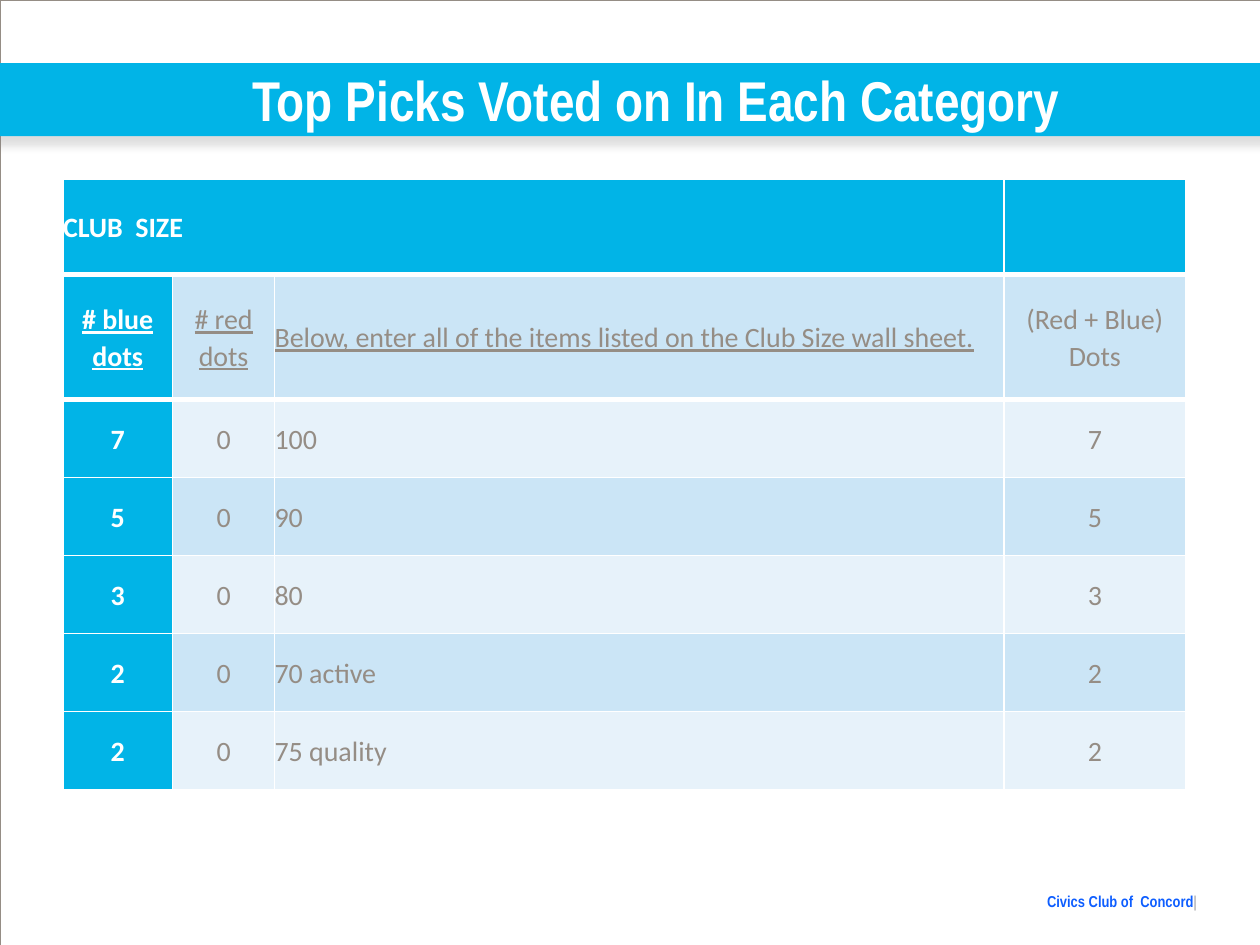
from dataclasses import dataclass

from lxml import etree
from pptx import Presentation
from pptx import util as u
from pptx.dml.color import RGBColor
from pptx.enum import shapes, text
from pptx.oxml import ns

COLORS = {
    "white": "FFFFFF", "cyan": "01B4E7", "taupe": "958D85", "blue": "0E5EFF",
    "silver": "BCBDC0", "band_dark": "CBE5F6", "band_light": "E7F2FA",
    "shadow": "808080",
}
LEFT, CENTER, RIGHT = text.PP_ALIGN.LEFT, text.PP_ALIGN.CENTER, text.PP_ALIGN.RIGHT


@dataclass
class Tally:
    blue: str
    red: str
    item: str
    total: str


HEADINGS = Tally("# blue dots", "# red dots",
                 "Below, enter all of the items listed on the Club Size wall sheet.",
                 "(Red + Blue) Dots")
TALLIES = [
    Tally("7", "0", "100", "7"),
    Tally("5", "0", "90", "5"),
    Tally("3", "0", "80", "3"),
    Tally("2", "0", "70 active", "2"),
    Tally("2", "0", "75 quality", "2"),
]
COLUMN_WIDTHS = [0.87, 0.81, 5.79, 1.44]
ROW_HEIGHTS = [0.76, 0.99] + [0.62] * len(TALLIES)
ITEM_COLUMN, TOTAL_COLUMN = 2, 3


def rgb(color: str) -> RGBColor:
    return RGBColor.from_string(COLORS[color])


def write(paragraph, words: str, *, size: float, font: str, color: str,
          bold: bool = False, underline: bool = False, align=LEFT, spacing: float = 1.0) -> None:
    paragraph.alignment = align
    paragraph.line_spacing = spacing
    run = paragraph.add_run()
    run.text = words
    run.font.size = u.Pt(size)
    run.font.name = font
    run.font.bold = bold
    run.font.underline = underline
    run.font.color.rgb = rgb(color)


def add_box(slide, left: float, top: float, width: float, height: float):
    """Add a wrapped text box without margins and return its first paragraph."""
    frame = slide.shapes.add_textbox(u.Inches(left), u.Inches(top),
                                     u.Inches(width), u.Inches(height)).text_frame
    frame.word_wrap = True
    frame.vertical_anchor = text.MSO_ANCHOR.MIDDLE
    frame.margin_left = frame.margin_right = frame.margin_top = frame.margin_bottom = 0
    return frame.paragraphs[0]


def add_rectangle(slide, left: float, top: float, width: float, height: float):
    rectangle = slide.shapes.add_shape(shapes.MSO_SHAPE.RECTANGLE, u.Inches(left), u.Inches(top),
                                       u.Inches(width), u.Inches(height))
    rectangle.shadow.inherit = False
    return rectangle


def add_color(parent, color: str):
    return etree.SubElement(parent, ns.qn("a:srgbClr"), val=COLORS[color])


def add_shadow(shape) -> None:
    effects = shape._element.spPr.find(ns.qn("a:effectLst"))
    shadow = etree.SubElement(effects, ns.qn("a:outerShdw"), blurRad=str(u.Pt(5)),
                              dist=str(u.Pt(4.8)), dir="5400000", rotWithShape="0")
    etree.SubElement(add_color(shadow, "shadow"), ns.qn("a:alpha"), val="25000")


def format_cell(cell, fill: str, top: float, bottom: float) -> None:
    cell.margin_left = cell.margin_right = cell.margin_top = cell.margin_bottom = 0
    cell.vertical_anchor = text.MSO_ANCHOR.MIDDLE
    properties = cell._tc.get_or_add_tcPr()
    for side, width in (("L", 1), ("R", 1), ("T", top), ("B", bottom)):
        line = etree.SubElement(properties, ns.qn(f"a:ln{side}"), w=str(u.Pt(width)))
        add_color(etree.SubElement(line, ns.qn("a:solidFill")), "white")
    cell.fill.solid()
    cell.fill.fore_color.rgb = rgb(fill)


def add_votes(slide) -> None:
    votes = slide.shapes.add_table(
        len(ROW_HEIGHTS), len(COLUMN_WIDTHS), u.Inches(0.5), u.Inches(1.42),
        u.Inches(sum(COLUMN_WIDTHS)), u.Inches(sum(ROW_HEIGHTS))).table
    votes.first_row = votes.horz_banding = False
    for column, width in zip(votes.columns, COLUMN_WIDTHS):
        column.width = u.Inches(width)
    for row, height in zip(votes.rows, ROW_HEIGHTS):
        row.height = u.Inches(height)
    body = dict(size=16, font="Calibri", spacing=1.07)

    # Category row
    for c in range(len(COLUMN_WIDTHS)):
        format_cell(votes.cell(0, c), "cyan", top=1, bottom=3)
    category = votes.cell(0, 0)
    category.merge(votes.cell(0, ITEM_COLUMN))
    write(category.text_frame.paragraphs[0], "CLUB  SIZE", color="white", bold=True, **body)

    # Headings and banded tallies
    for r, tally in enumerate([HEADINGS, *TALLIES], start=1):
        heading = r == 1
        band = "band_dark" if r % 2 else "band_light"
        for c, words in enumerate((tally.blue, tally.red, tally.item, tally.total)):
            first = c == 0
            cell = votes.cell(r, c)
            format_cell(cell, "cyan" if first else band,
                        top=3 if r <= 2 else 1, bottom=3 if heading else 1)
            write(cell.text_frame.paragraphs[0], words,
                  color="white" if first else "taupe", bold=first,
                  underline=heading and c != TOTAL_COLUMN,
                  align=LEFT if c == ITEM_COLUMN else CENTER, **body)


def main() -> None:
    deck = Presentation()
    deck.slide_width, deck.slide_height = u.Inches(10), u.Inches(7.5)
    slide = deck.slides.add_slide(deck.slide_layouts[6])

    # Footer
    footer = add_box(slide, 7.75, 7.08, 1.75, 0.14)
    for words, color, bold in (("Civics Club of  Concord", "blue", True), ("|", "silver", True)):
        write(footer, words, size=9, font="Arial Narrow", color=color, bold=bold, align=RIGHT)

    # Page outline
    outline = add_rectangle(slide, 0, 0, 10, 7.5)
    outline.fill.background()
    outline.line.color.rgb = rgb("taupe")
    outline.line.width = u.Pt(0.25)

    # Title band
    band = add_rectangle(slide, -0.08, 0.5, 10.17, 0.58)
    band.fill.solid()
    band.fill.fore_color.rgb = rgb("cyan")
    band.line.fill.background()
    add_shadow(band)
    write(add_box(slide, 0.42, 0.5, 9.58, 0.58), "Top Picks Voted on In Each Category",
          size=32, font="Arial Narrow", color="white", bold=True, align=CENTER)

    add_votes(slide)
    deck.save("out.pptx")


if __name__ == "__main__":
    main()
